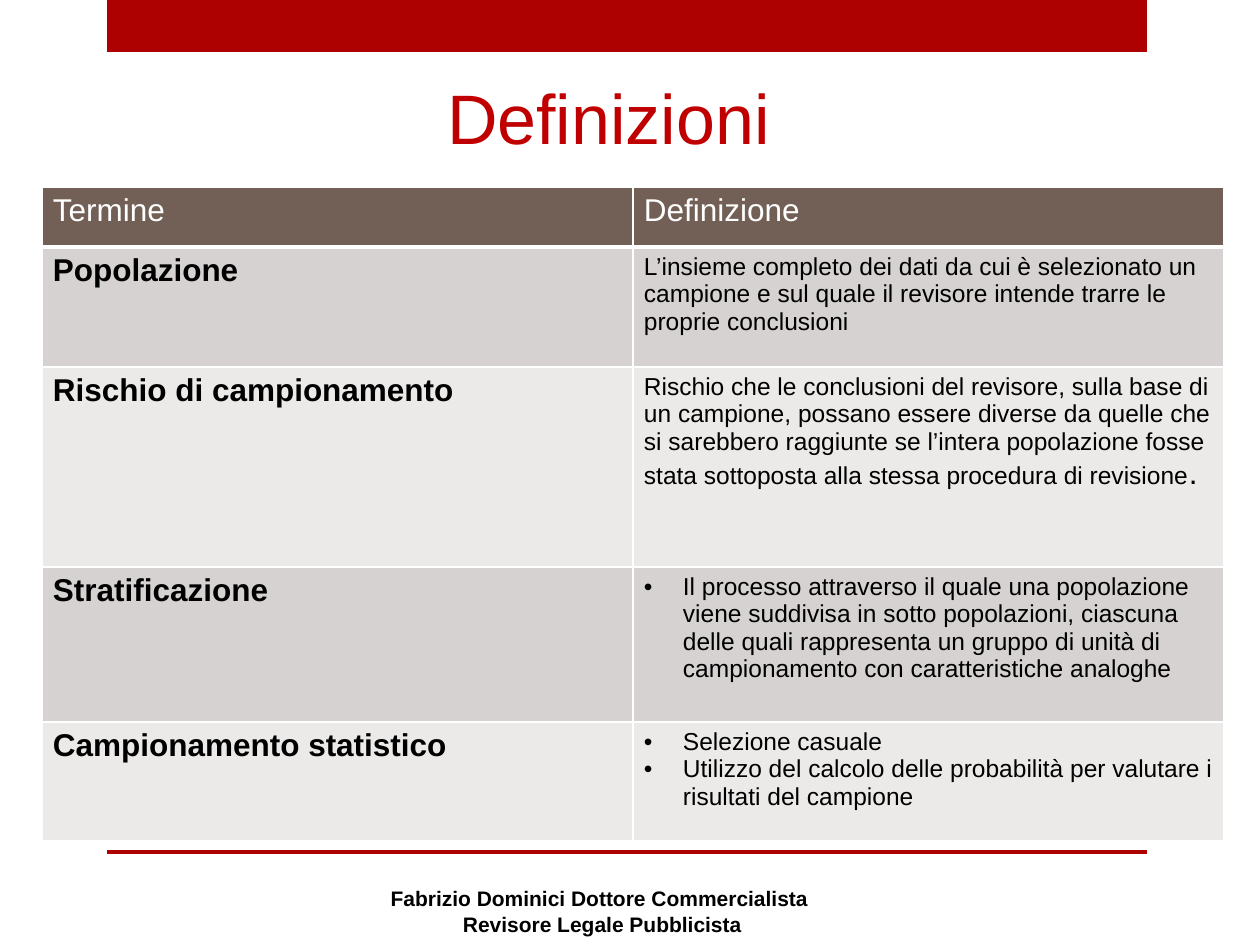
from dataclasses import dataclass

from lxml import etree
from pptx import Presentation, util as u
from pptx.dml.color import RGBColor
from pptx.enum import shapes, text
from pptx.oxml import ns

PX = 914400 / 126


@dataclass(frozen=True)
class Theme:
    font: str = "Arial"
    bar: str = "AD0101"
    title: str = "C00000"
    header: str = "726056"
    bands: tuple = ("D5D2D1", "EBEAE9")
    white: str = "FFFFFF"
    ink: str = "000000"
    title_pt: int = 40
    term_pt: int = 18
    body_pt: int = 14
    footer_pt: int = 12


T = Theme()
TABLE_HEADER = ("Termine", "Definizione")
ROW_HEIGHTS = (60, 120, 200, 155, 119)
DEFINITIONS = (
    ("Popolazione", False, [
        "L’insieme completo dei dati da cui è selezionato un campione e sul quale "
        "il revisore intende trarre le proprie conclusioni"]),
    ("Rischio di campionamento", False, [
        "Rischio che le conclusioni del revisore, sulla base di un campione, possano "
        "essere diverse da quelle che si sarebbero raggiunte se l’intera popolazione "
        "fosse stata sottoposta alla stessa procedura di revisione"]),
    ("Stratificazione", True, [
        "Il processo attraverso il quale una popolazione viene suddivisa in sotto "
        "popolazioni, ciascuna delle quali rappresenta un gruppo di unità di "
        "campionamento con caratteristiche analoghe"]),
    ("Campionamento statistico", True, [
        "Selezione casuale",
        "Utilizzo del calcolo delle probabilità per valutare i risultati del campione"]),
)


def px(n):
    return u.Emu(round(n * PX))


def rgb(value):
    return RGBColor.from_string(value)


def style_run(r, size, color, bold=False):
    r.font.name = T.font
    r.font.size = u.Pt(size)
    r.font.bold = bold
    r.font.color.rgb = rgb(color)


def write(tf, lines, size, color, bold=False, align=None):
    tf.text = "\n".join(lines)
    for p in tf.paragraphs:
        p.alignment = align
        for r in p.runs:
            style_run(r, size, color, bold)


def add_bar(s, box):
    sp = s.shapes.add_shape(shapes.MSO_SHAPE.RECTANGLE, *map(px, box))
    sp.shadow.inherit = False
    sp.fill.solid()
    sp.fill.fore_color.rgb = rgb(T.bar)
    sp.line.fill.background()


def add_text(s, box, lines, size, color, anchor, bold=False):
    tf = s.shapes.add_textbox(*map(px, box)).text_frame
    tf.word_wrap = True
    tf.vertical_anchor = anchor
    write(tf, lines, size, color, bold, text.PP_ALIGN.CENTER)


def add_bullet(p):
    pPr = p._p.get_or_add_pPr()
    pPr.set("marL", str(px(39)))
    pPr.set("indent", str(-px(39)))
    etree.SubElement(pPr, ns.qn("a:buFont")).set("typeface", T.font)
    etree.SubElement(pPr, ns.qn("a:buChar")).set("char", "•")


def style_cell(cell, fill, bottom_pt=1):
    tcPr = cell._tc.get_or_add_tcPr()
    for side, width in (("L", 1), ("R", 1), ("T", 1), ("B", bottom_pt)):
        ln = etree.SubElement(tcPr, ns.qn(f"a:ln{side}"), w=str(u.Pt(width)))
        solid = etree.SubElement(ln, ns.qn("a:solidFill"))
        etree.SubElement(solid, ns.qn("a:srgbClr"), val=T.white)
    cell.fill.solid()
    cell.fill.fore_color.rgb = rgb(fill)
    cell.margin_left = cell.margin_right = px(11)
    cell.margin_top = cell.margin_bottom = px(6)


def add_definitions(s, x, y, w):
    box = (x, y, w, sum(ROW_HEIGHTS))
    tbl = s.shapes.add_table(len(ROW_HEIGHTS), 2, *map(px, box)).table
    for col in tbl.columns:
        col.width = px(w // 2)
    for row, h in zip(tbl.rows, ROW_HEIGHTS):
        row.height = px(h)
    for c, label in enumerate(TABLE_HEADER):
        cell = tbl.cell(0, c)
        style_cell(cell, T.header, 3)
        write(cell.text_frame, [label], T.term_pt, T.white)
    for i, (term, bulleted, lines) in enumerate(DEFINITIONS):
        left, right = tbl.rows[i + 1].cells
        for cell in (left, right):
            style_cell(cell, T.bands[i % 2])
        write(left.text_frame, [term], T.term_pt, T.ink, True)
        write(right.text_frame, lines, T.body_pt, T.ink)
        if bulleted:
            for p in right.text_frame.paragraphs:
                add_bullet(p)
    r = tbl.cell(2, 1).text_frame.paragraphs[0].add_run()
    r.text = "."
    style_run(r, T.term_pt, T.ink)


def main():
    prs = Presentation()
    prs.slide_width, prs.slide_height = px(1260), px(945)
    s = prs.slides.add_slide(prs.slide_layouts[6])
    add_bar(s, (107, 0, 1040, 52))
    add_bar(s, (107, 850, 1040, 4))
    add_text(s, (74, 20, 1069, 145), ["Definizioni"], T.title_pt, T.title,
             text.MSO_ANCHOR.BOTTOM)
    add_definitions(s, 42, 187, 1182)
    add_text(s, (375, 877, 449, 68),
             ["Fabrizio Dominici Dottore Commercialista", " Revisore Legale Pubblicista"],
             T.footer_pt, T.ink, text.MSO_ANCHOR.MIDDLE, True)
    prs.save("out.pptx")


if __name__ == "__main__":
    main()
